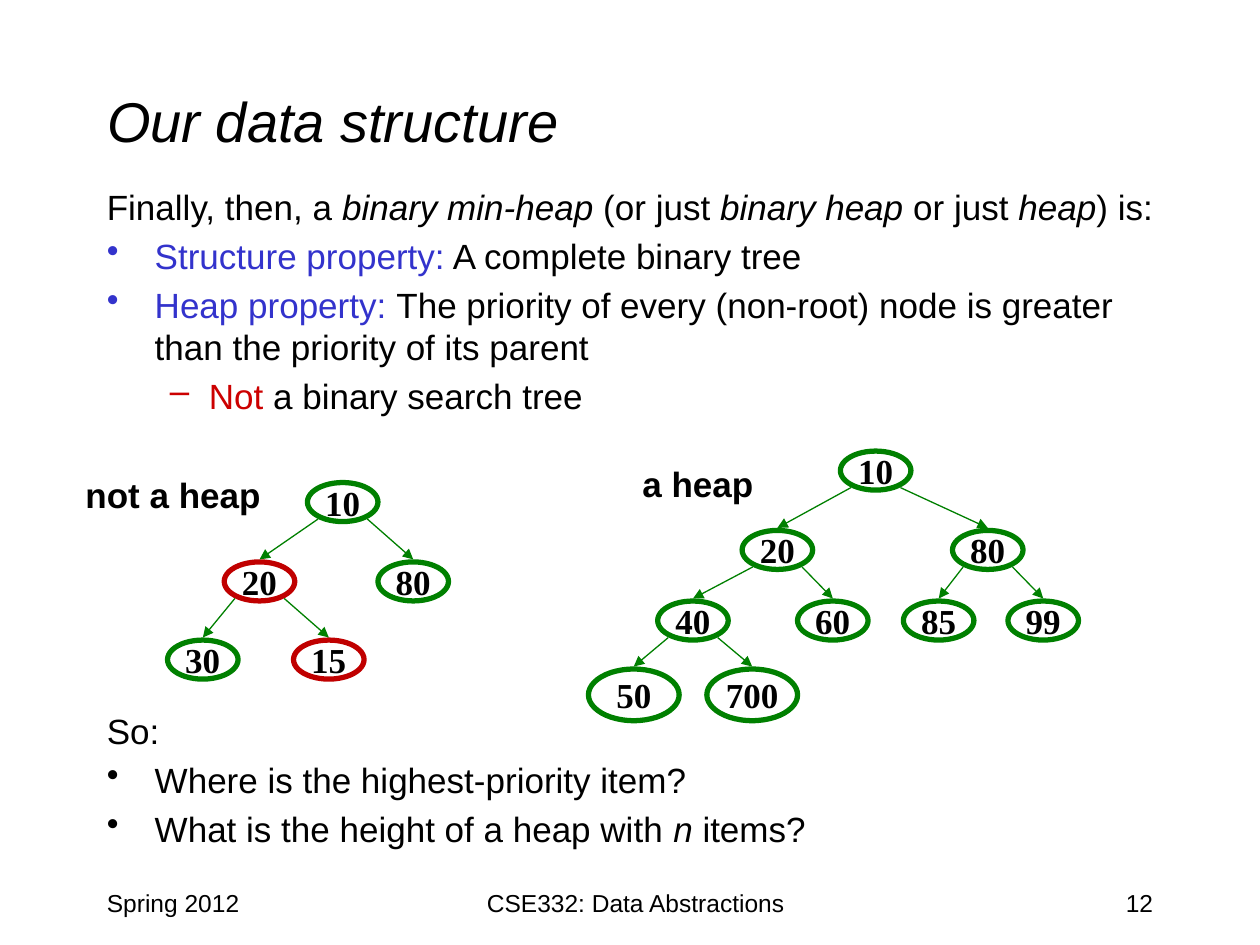
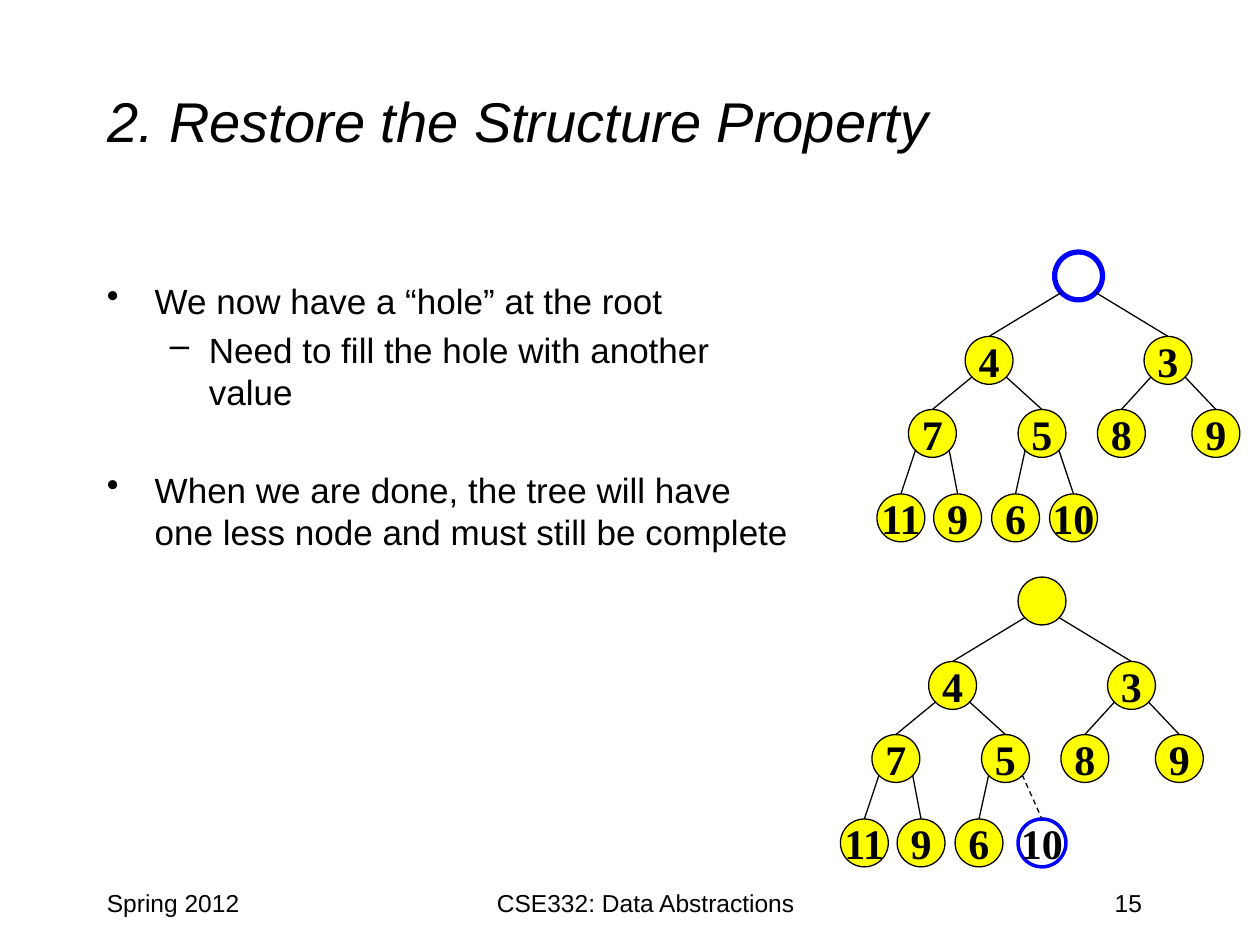
from dataclasses import dataclass, replace
from typing import NamedTuple, Optional

from lxml import etree
from pptx import Presentation
from pptx.dml.color import RGBColor
from pptx.enum import dml, shapes, text
from pptx.oxml.ns import qn
from pptx.util import Inches, Pt

BLACK = RGBColor(0x00, 0x00, 0x00)
GREEN = RGBColor(0x00, 0x80, 0x00)
DARK_RED = RGBColor(0xC0, 0x00, 0x00)
RED = RGBColor(0xCC, 0x00, 0x00)
INDIGO = RGBColor(0x33, 0x33, 0xCC)
BLUE = RGBColor(0x00, 0x00, 0xFF)
YELLOW = RGBColor(0xFF, 0xFF, 0x00)
SANS, SERIF = "Arial", "Times New Roman"
LEFT, CENTER, RIGHT = text.PP_ALIGN.LEFT, text.PP_ALIGN.CENTER, text.PP_ALIGN.RIGHT


class Span(NamedTuple):
    text: str
    color: RGBColor = BLACK
    italic: bool = False


class Para(NamedTuple):
    spans: list[Span]
    bullet: str = ""
    level: int = 0
    before: float = 4


class Box(NamedTuple):
    left: float
    top: float
    width: float
    height: float

    def inches(self) -> list[int]:
        return [Inches(v) for v in self]


@dataclass(frozen=True)
class Node:
    label: str
    left: float
    top: float
    parent: Optional[int] = None  # index in the tree's list
    line: RGBColor = GREEN
    weight: float = 3
    width: float = 0.56
    height: float = 0.31
    fill: Optional[RGBColor] = None
    dashed_edge: bool = False

    @property
    def center(self) -> float:
        return self.left + self.width / 2


class TreeStyle(NamedTuple):
    size: int
    edge: RGBColor
    drop: float  # from a parent's top to where its edges start
    gap: float  # between an edge's end and the child
    arrow: bool


HEAP_STYLE = TreeStyle(20, GREEN, 0.29, 0.02, True)
CIRCLE_STYLE = TreeStyle(24, BLACK, 0.32, 0, False)


# Text
def style_font(font, size: float, color: RGBColor = BLACK, name: str = SANS,
               bold: bool = False, italic: bool = False) -> None:
    font.size, font.name = Pt(size), name
    font.bold, font.italic = bold, italic
    font.color.rgb = color


def add_line_of_text(slide, box: Box, content: str, size: float, align=LEFT,
                     bold: bool = False, wrap: bool = True) -> None:
    tf = slide.shapes.add_textbox(*box.inches()).text_frame
    tf.word_wrap = wrap
    tf.text = content
    p = tf.paragraphs[0]
    p.alignment = align
    style_font(p.runs[0].font, size, bold=bold)


def add_body(slide, box: Box, paras: list[Para]) -> None:
    tf = slide.shapes.add_textbox(*box.inches()).text_frame
    tf.word_wrap = True
    for i, para in enumerate(paras):
        p = tf.add_paragraph() if i else tf.paragraphs[0]
        margin, hanging = (0.81, 0.31) if para.level else (0.38, 0.38)
        p_pr = p._p.get_or_add_pPr()
        p_pr.set("marL", str(Inches(margin)))
        p_pr.set("indent", str(-Inches(hanging)))
        if para.bullet:
            etree.SubElement(p_pr, qn("a:buChar")).set("char", para.bullet)
        p.level = para.level
        p.line_spacing = Pt(24)
        if i:
            p.space_before = Pt(para.before)
        for span in para.spans:
            r = p.add_run()
            r.text = span.text
            style_font(r.font, 20, span.color, italic=span.italic)


# Trees
def add_node(slide, node: Node, size: int) -> None:
    box = Box(node.left, node.top, node.width, node.height)
    sp = slide.shapes.add_shape(shapes.MSO_SHAPE.OVAL, *box.inches())
    sp.shadow.inherit = False
    if node.fill is None:
        sp.fill.background()
    else:
        sp.fill.solid()
        sp.fill.fore_color.rgb = node.fill
    sp.line.color.rgb = node.line
    sp.line.width = Pt(node.weight)
    if node.label:
        tf = sp.text_frame
        tf.word_wrap = False
        tf.vertical_anchor = text.MSO_ANCHOR.MIDDLE
        tf.text = node.label
        p = tf.paragraphs[0]
        p.alignment = CENTER
        style_font(p.runs[0].font, size, name=SERIF, bold=True)


def add_edge(slide, parent: Node, child: Node, style: TreeStyle) -> None:
    side = 1 if child.center > parent.center else -1
    start = parent.center + side * 0.35 * parent.width
    cxn = slide.shapes.add_connector(
        shapes.MSO_CONNECTOR.STRAIGHT,
        Inches(start), Inches(parent.top + style.drop),
        Inches(child.center), Inches(child.top - style.gap))
    cxn.line.color.rgb = style.edge
    cxn.line.width = Pt(0.75)
    if child.dashed_edge:
        cxn.line.dash_style = dml.MSO_LINE.DASH
    if style.arrow:
        ln = cxn.line._get_or_add_ln()
        etree.SubElement(ln, qn("a:tailEnd")).set("type", "triangle")
    etree.SubElement(cxn._element.spPr, qn("a:effectLst"))


def add_tree(slide, nodes: list[Node], style: TreeStyle) -> None:
    for node in nodes:
        add_node(slide, node, style.size)
    for node in nodes:
        if node.parent is not None:
            add_edge(slide, nodes[node.parent], node, style)


def circle(label: str, left: float, top: float, parent: Optional[int] = None) -> Node:
    return Node(label, left, top, parent, BLACK, 0.75, 0.38, 0.38, YELLOW)


# Shared slide frame
def add_slide(prs, title: str, number: str, number_box: Box, number_align,
              course_left: float):
    slide = prs.slides.add_slide(prs.slide_layouts[5])
    sp = slide.shapes.title
    sp.left, sp.top, sp.width, sp.height = Box(0.75, 0.33, 8.5, 1.25).inches()
    tf = sp.text_frame
    tf.vertical_anchor = text.MSO_ANCHOR.MIDDLE
    tf.text = title
    p = tf.paragraphs[0]
    p.alignment = LEFT
    style_font(p.runs[0].font, 32, italic=True)

    add_line_of_text(slide, Box(0.75, 7, 2.08, 0.5), "Spring 2012", 14)
    add_line_of_text(slide, Box(course_left, 7, 3.75, 0.5),
                     "CSE332: Data Abstractions", 14, CENTER)
    add_line_of_text(slide, number_box, number, 14, number_align)
    return slide


def build_data_structure(prs) -> None:
    slide = add_slide(prs, "Our data structure", "12",
                      Box(7.17, 7, 2.08, 0.5), RIGHT, 3.17)
    add_body(slide, Box(0.75, 1.42, 8.5, 1.67), [
        Para([Span("Finally, then, a "), Span("binary min-heap", italic=True),
              Span(" (or just "), Span("binary heap", italic=True),
              Span(" or just "), Span("heap", italic=True), Span(") is:")]),
        Para([Span("Structure property:", INDIGO),
              Span(" A complete binary tree")], "•"),
        Para([Span("Heap property: ", INDIGO),
              Span("The priority of every (non-root) node is greater than "
                   "the priority of its parent")], "•"),
        Para([Span("Not", RED), Span(" a binary search tree")], "–", 1),
    ])

    # Tree that breaks the heap property
    add_tree(slide, [
        Node("10", 2.44, 3.83),
        Node("20", 1.78, 4.46, 0, DARK_RED),
        Node("80", 3, 4.46, 0),
        Node("30", 1.33, 5.08, 1),
        Node("15", 2.33, 5.08, 1, DARK_RED),
    ], HEAP_STYLE)

    # Valid heap
    add_tree(slide, [
        Node("10", 6.67, 3.58),
        Node("20", 5.89, 4.21, 0),
        Node("80", 7.56, 4.21, 0),
        Node("40", 5.22, 4.77, 1),
        Node("60", 6.33, 4.77, 1),
        Node("85", 7.17, 4.77, 2),
        Node("99", 8, 4.77, 2),
        Node("50", 4.67, 5.31, 3, width=0.72, height=0.41),
        Node("700", 5.61, 5.31, 3, width=0.72, height=0.41),
    ], HEAP_STYLE)
    add_line_of_text(slide, Box(0.58, 3.71, 1.69, 0.44), "not a heap", 20,
                     bold=True, wrap=False)
    add_line_of_text(slide, Box(5, 3.62, 1.08, 0.44), "a heap", 20,
                     bold=True, wrap=False)

    add_body(slide, Box(0.75, 5.58, 8.5, 1.67), [
        Para([Span("So:")]),
        Para([Span("Where is the highest-priority item?")], "•"),
        Para([Span("What is the height of a heap with "),
              Span("n", italic=True), Span(" items?")], "•"),
    ])


def build_restore_structure(prs) -> None:
    slide = add_slide(prs, "2. Restore the Structure Property", "15",
                      Box(7.08, 7, 3.75, 0.5), CENTER, 3.25)
    add_body(slide, Box(0.75, 2.17, 5.67, 4.5), [
        Para([Span("We now have a “hole” at the root")], "•"),
        Para([Span("Need to fill the hole with another value")], "–", 1),
        Para([Span("When we are done, the tree will have one less node and "
                   "must still be complete")], "•", before=32),
    ])

    tree = [
        circle("", 8.37, 2),
        circle("4", 7.66, 2.67, 0),
        circle("3", 9.08, 2.67, 0),
        circle("7", 7.21, 3.25, 1),
        circle("5", 8.08, 3.25, 1),
        circle("8", 8.71, 3.25, 2),
        circle("9", 9.46, 3.25, 2),
        circle("11", 6.96, 3.92, 3),
        circle("9", 7.41, 3.92, 3),
        circle("6", 7.87, 3.92, 4),
        circle("10", 8.33, 3.92, 4),
    ]
    # Hole at the root
    hole = replace(tree[0], fill=None, line=BLUE, weight=3)
    add_tree(slide, [hole, *tree[1:]], CIRCLE_STYLE)

    # Last node leaves the tree
    moved = [replace(n, left=n.left - 0.29, top=n.top + 2.58) for n in tree]
    moved[-1] = replace(moved[-1], left=8.08, fill=None, line=BLUE, weight=2,
                        dashed_edge=True)
    add_tree(slide, moved, CIRCLE_STYLE)


def main() -> None:
    prs = Presentation()
    prs.slide_width, prs.slide_height = Inches(10), Inches(7.5)
    build_data_structure(prs)
    build_restore_structure(prs)
    prs.save("out.pptx")


if __name__ == "__main__":
    main()
